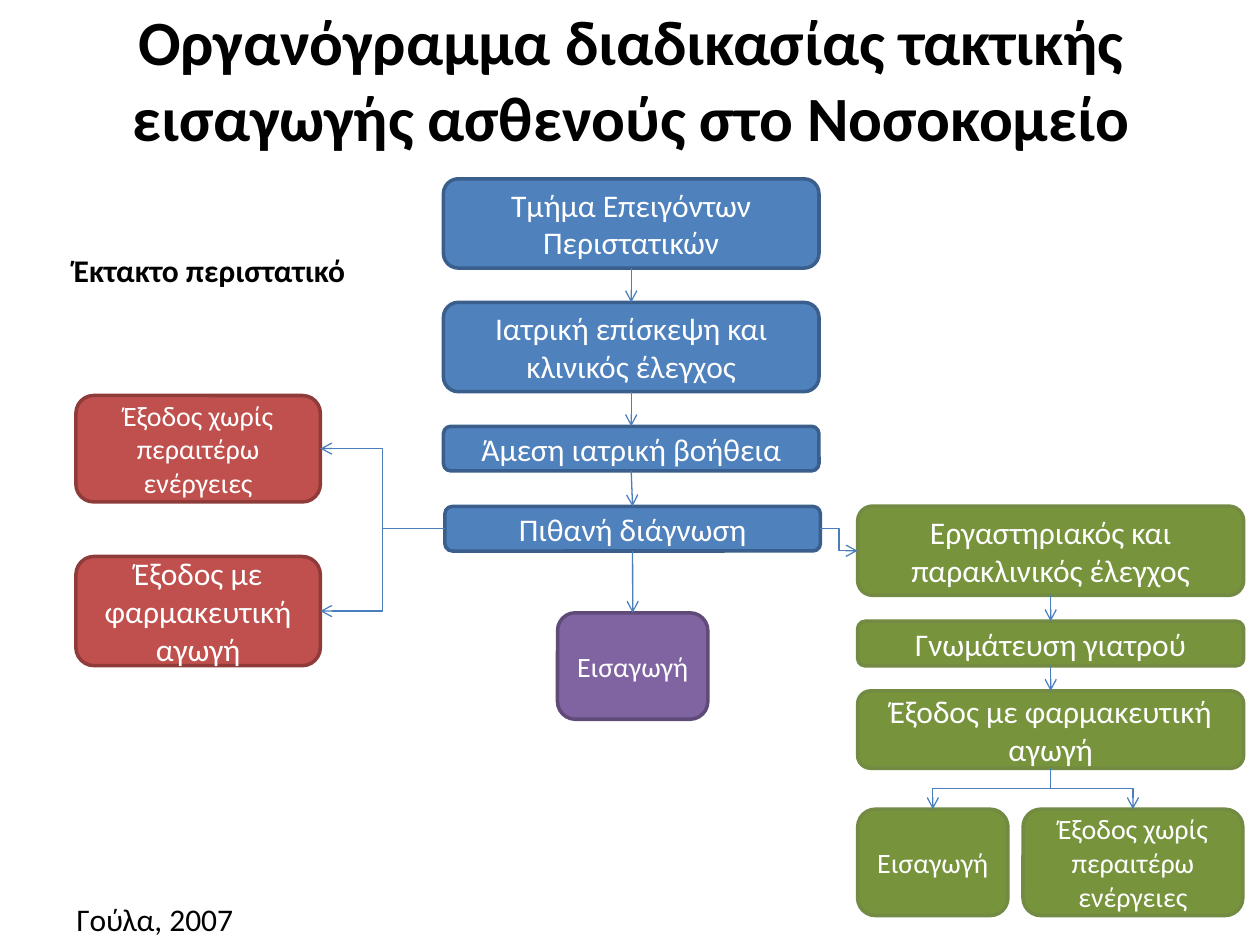
from dataclasses import dataclass

import pptx
import pptx.util
from lxml import etree
from pptx.dml.color import RGBColor
from pptx.enum.shapes import MSO_CONNECTOR, MSO_SHAPE
from pptx.enum.text import MSO_ANCHOR, PP_ALIGN
from pptx.oxml.ns import qn

Pt = pptx.util.Pt

FONT = "Calibri"
BLACK = RGBColor(0x00, 0x00, 0x00)
WHITE = RGBColor(0xFF, 0xFF, 0xFF)
ARROW_BLUE = RGBColor(0x4B, 0x7E, 0xBC)
BLUE = (RGBColor(0x4F, 0x81, 0xBD), RGBColor(0x3A, 0x5F, 0x8C))
GREEN = (RGBColor(0x77, 0x93, 0x3C), RGBColor(0x73, 0x8A, 0x42))
PURPLE = (RGBColor(0x80, 0x64, 0xA2), RGBColor(0x5F, 0x4A, 0x78))
RED = (RGBColor(0xC0, 0x50, 0x4D), RGBColor(0x8E, 0x3B, 0x39))
TOP, LEFT, BOTTOM, RIGHT = range(4)

EMERGENCY_X, EMERGENCY_W = 253.4, 214.6
LAB_X, LAB_W = 490.1, 220.6
EXIT_X, EXIT_W = 43.4, 139.7
ADMIT_W, LEAF_H = 85.9, 60.8
LOW_H, HIGH_H = 25.5, 51


@dataclass(frozen=True)
class Step:
    key: str
    text: str
    x: float
    y: float
    width: float
    height: float
    colors: tuple[RGBColor, RGBColor]
    size: float = 18


@dataclass(frozen=True)
class Link:
    start: str
    start_side: int
    end: str
    end_side: int
    bent: bool = False


STEPS = [
    Step("emergency", "Τμήμα Επειγόντων Περιστατικών",
         EMERGENCY_X, 102.2, EMERGENCY_W, HIGH_H, BLUE),
    Step("visit", "Ιατρική επίσκεψη και κλινικός έλεγχος",
         EMERGENCY_X, 172.8, EMERGENCY_W, HIGH_H, BLUE),
    Step("aid", "Άμεση ιατρική βοήθεια",
         EMERGENCY_X, 243.6, EMERGENCY_W, LOW_H, BLUE),
    Step("diagnosis", "Πιθανή διάγνωση",
         254.2, 289.4, EMERGENCY_W, LOW_H, BLUE),
    Step("lab admission", "Εισαγωγή", LAB_X, 462.4, ADMIT_W, LEAF_H, GREEN, 16),
    Step("lab exit", "Έξοδος χωρίς περαιτέρω ενέργειες",
         584.6, 462.4, 125.6, LEAF_H, GREEN, 16),
    Step("lab", "Εργαστηριακός και παρακλινικός έλεγχος",
         LAB_X, 289.2, LAB_W, HIGH_H, GREEN),
    Step("opinion", "Γνωμάτευση γιατρού", LAB_X, 355, LAB_W, LOW_H, GREEN),
    Step("lab medication", "Έξοδος με φαρμακευτική αγωγή",
         LAB_X, 394.8, LAB_W, 44.2, GREEN),
    Step("admission", "Εισαγωγή", 318.6, 350.2, ADMIT_W, LEAF_H, PURPLE, 16),
    Step("exit", "Έξοδος χωρίς περαιτέρω ενέργειες",
         EXIT_X, 226, EXIT_W, LEAF_H, RED, 16),
    Step("medication", "Έξοδος με φαρμακευτική αγωγή",
         EXIT_X, 318, EXIT_W, 62.4, RED),
]

LINKS = [
    Link("emergency", BOTTOM, "visit", TOP),
    Link("visit", BOTTOM, "aid", TOP),
    Link("aid", BOTTOM, "diagnosis", TOP),
    Link("diagnosis", LEFT, "exit", RIGHT, bent=True),
    Link("diagnosis", LEFT, "medication", RIGHT, bent=True),
    Link("diagnosis", RIGHT, "lab", LEFT, bent=True),
    Link("diagnosis", BOTTOM, "admission", TOP),
    Link("lab", BOTTOM, "opinion", TOP),
    Link("opinion", BOTTOM, "lab medication", TOP),
    Link("lab medication", BOTTOM, "lab admission", TOP, bent=True),
    Link("lab medication", BOTTOM, "lab exit", TOP, bent=True),
]


def set_font(paragraph, size: float, color: RGBColor, bold: bool = False) -> None:
    paragraph.font.name = FONT
    paragraph.font.size = Pt(size)
    paragraph.font.bold = bold
    paragraph.font.color.rgb = color


def add_step(slide, step: Step):
    box = slide.shapes.add_shape(
        MSO_SHAPE.ROUNDED_RECTANGLE,
        Pt(step.x), Pt(step.y), Pt(step.width), Pt(step.height))
    box.shadow.inherit = False
    fill, border = step.colors
    box.fill.solid()
    box.fill.fore_color.rgb = fill
    box.line.color.rgb = border
    box.line.width = Pt(2)
    frame = box.text_frame
    frame.word_wrap = True
    frame.vertical_anchor = MSO_ANCHOR.MIDDLE
    frame.text = step.text
    frame.paragraphs[0].alignment = PP_ALIGN.CENTER
    set_font(frame.paragraphs[0], step.size, WHITE)
    return box


def turn_downward(elbow) -> None:
    """Rotate an elbow so that it leaves and arrives vertically."""
    across, down = elbow.end_x - elbow.begin_x, elbow.end_y - elbow.begin_y
    center_x = (elbow.begin_x + elbow.end_x) // 2
    center_y = (elbow.begin_y + elbow.end_y) // 2
    elbow.width, elbow.height = down, abs(across)
    elbow.left, elbow.top = center_x - down // 2, center_y - abs(across) // 2
    xfrm = elbow._element.spPr.find(qn("a:xfrm"))
    xfrm.set("rot", str((270 if across > 0 else 90) * 60000))
    xfrm.set("flipH", "1" if across > 0 else "0")


def add_link(slide, boxes: dict, link: Link) -> None:
    kind = MSO_CONNECTOR.ELBOW if link.bent else MSO_CONNECTOR.STRAIGHT
    arrow = slide.shapes.add_connector(kind, 0, 0, 0, 0)
    arrow.begin_connect(boxes[link.start], link.start_side)
    arrow.end_connect(boxes[link.end], link.end_side)
    if link.bent and link.start_side == BOTTOM:
        turn_downward(arrow)
    arrow.line.color.rgb = ARROW_BLUE
    arrow.line.width = Pt(0.75)
    etree.SubElement(arrow.line._get_or_add_ln(), qn("a:tailEnd"), type="arrow")
    etree.SubElement(arrow._element.spPr, qn("a:effectLst"))


def add_note(slide, text: str, x: float, y: float, width: float,
             bold: bool = False, wrap: bool = True) -> None:
    frame = slide.shapes.add_textbox(Pt(x), Pt(y), Pt(width), Pt(29)).text_frame
    frame.word_wrap = wrap
    frame.text = text
    set_font(frame.paragraphs[0], 18, BLACK, bold)


def main() -> None:
    deck = pptx.Presentation()
    deck.slide_width, deck.slide_height = Pt(720), Pt(540)
    slide = deck.slides.add_slide(deck.slide_layouts[5])

    title = slide.shapes.title
    title.left, title.top, title.width, title.height = Pt(36.7), Pt(9.4), Pt(648), Pt(71)
    title.text_frame.text = "Οργανόγραμμα διαδικασίας τακτικής εισαγωγής ασθενούς στο Νοσοκομείο"
    title.text_frame.vertical_anchor = MSO_ANCHOR.MIDDLE
    title.text_frame.paragraphs[0].alignment = PP_ALIGN.CENTER
    set_font(title.text_frame.paragraphs[0], 36, BLACK, bold=True)

    add_note(slide, "Έκτακτο περιστατικό", 35, 139.7, 170, bold=True)
    add_note(slide, "Γούλα, 2007", 36.7, 511, 105, wrap=False)

    boxes = {step.key: add_step(slide, step) for step in STEPS}
    for link in LINKS:
        add_link(slide, boxes, link)
    deck.save("out.pptx")


if __name__ == "__main__":
    main()
